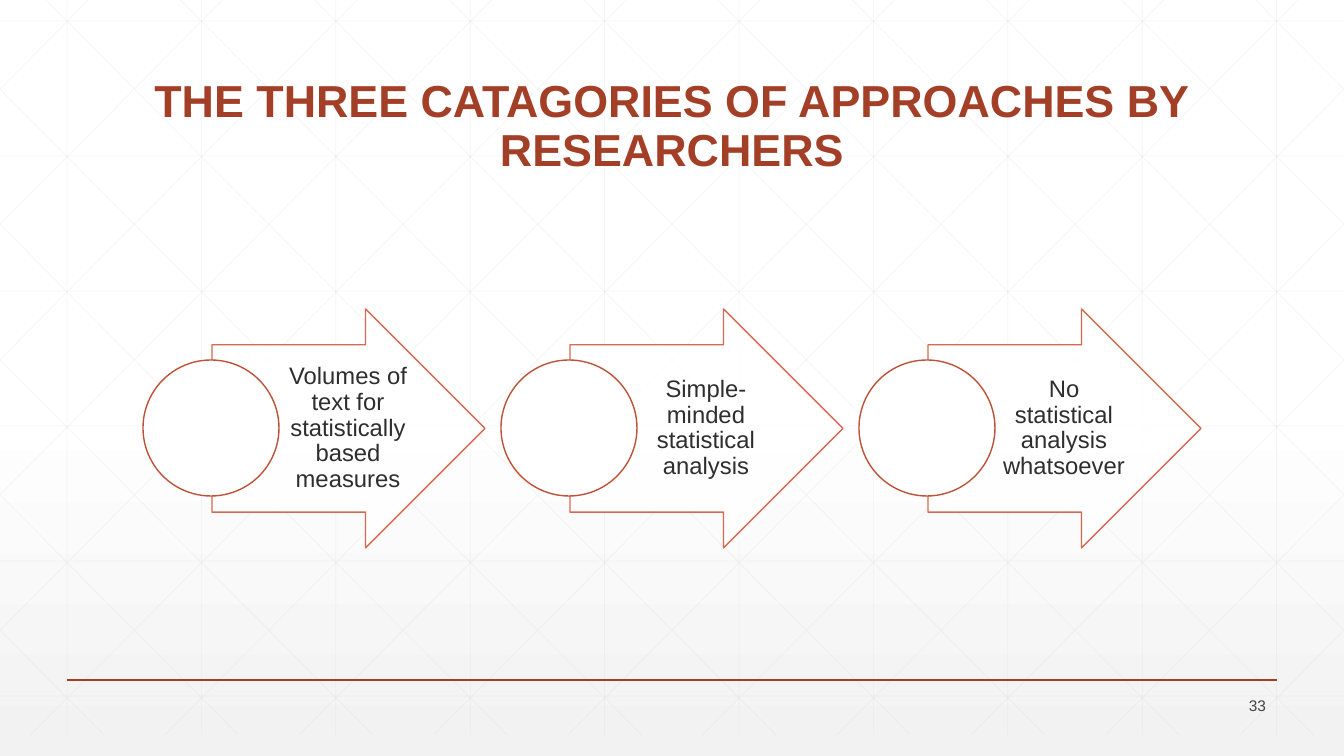
from lxml import etree
from pptx import Presentation
from pptx import util as u
from pptx.dml.color import RGBColor
from pptx.enum import shapes, text
from pptx.oxml.ns import qn

PX = 914400 / 100.8
W, H = 1344, 756
RUST, GRID, WHITE = "A43F27", "D9D9D9", "FFFFFF"


def paint(color, value, opacity=100):
    """Set a colour and, below 100 percent, its opacity."""
    color.rgb = RGBColor.from_string(value)
    if opacity < 100:
        # The colour element is the last one in its solid fill
        clr = color._xFill.find(qn("a:srgbClr"))
        etree.SubElement(clr, qn("a:alpha")).set("val", str(opacity * 1000))


def add_text(box, words, size, color, align, anchor, bold=False, insets=(10, 5, 10, 5), spacing=1.0):
    """Add a one-paragraph text box; box and insets are in px."""
    tf = s.shapes.add_textbox(*[round(v * PX) for v in box]).text_frame
    tf.word_wrap = True
    tf.vertical_anchor = anchor
    tf.margin_left, tf.margin_top, tf.margin_right, tf.margin_bottom = [round(v * PX) for v in insets]
    p = tf.paragraphs[0]
    p.text = words
    p.alignment = align
    p.line_spacing = spacing
    p.font.name, p.font.size, p.font.bold = "Arial", u.Pt(size), bold
    paint(p.font.color, color)


prs = Presentation()
prs.slide_width, prs.slide_height = round(W * PX), round(H * PX)
s = prs.slides.add_slide(prs.slide_layouts[6])

# Background: white, fading to light grey at the bottom
fill = s.background.fill
fill.gradient()
fill.gradient_angle = 270
for stop, position, value in zip(fill.gradient_stops, (0.53, 1), (WHITE, "F2F2F2")):
    stop.position = position
    paint(stop.color, value)

# Grid: verticals, horizontals and both families of diagonals
STEP, GRID_BOTTOM, RUN = W / 10, 735, 730
lines = [(67 + STEP * i, 0, 67 + STEP * i, GRID_BOTTOM, GRID, 0.5, 25) for i in range(10)]
lines += [(0, 21 + 135 * i, W, 21 + 135 * i, GRID, 0.5, 25) for i in range(6)]
for i in range(-5, 10):
    x = 46 + STEP * i
    left, right = max(x, 0), min(x + RUN, W)
    top, bottom = [(edge - x) * GRID_BOTTOM / RUN for edge in (left, right)]
    lines.append((left, top, right, bottom, GRID, 0.5, 25))
    lines.append((W - left, top, W - right, bottom, GRID, 0.5, 25))

# Footer rule goes on top of the grid
lines.append((67, 680, 1277, 680, RUST, 1, 100))
for x1, y1, x2, y2, value, width, opacity in lines:
    line = s.shapes.add_connector(shapes.MSO_CONNECTOR.STRAIGHT, *[round(v * PX) for v in (x1, y1, x2, y2)])
    line.line.width = u.Pt(width)
    paint(line.line.color, value, opacity)
    etree.SubElement(line._element.spPr, qn("a:effectLst"))

# Title
add_text((143, 55, 1058, 126), "THE THREE CATAGORIES OF APPROACHES BY RESEARCHERS", 32, RUST,
         text.PP_ALIGN.CENTER, text.MSO_ANCHOR.BOTTOM, bold=True, spacing=0.9)

# Three arrows, each with a circle at its tail
approaches = [
    "Volumes of text for statistically based measures",
    "Simple-minded statistical analysis",
    "No statistical analysis whatsoever",
]
parts = [
    (shapes.MSO_SHAPE.RIGHT_ARROW, (212, 309, 273, 239), "D15A3E", 90),
    (shapes.MSO_SHAPE.OVAL, (143, 360, 136, 136), "BE5238", 100),
]
for i, words in enumerate(approaches):
    dx = 358 * i
    for kind, (x, y, w, h), outline, opacity in parts:
        sp = s.shapes.add_shape(kind, *[round(v * PX) for v in (x + dx, y, w, h)])
        sp.shadow.inherit = False
        sp.fill.solid()
        paint(sp.fill.fore_color, WHITE, opacity)
        sp.line.width = u.Pt(1)
        paint(sp.line.color, outline, opacity)
        if kind == shapes.MSO_SHAPE.RIGHT_ARROW:
            sp.adjustments[0], sp.adjustments[1] = 0.7, 0.5
    add_text((280 + dx, 345, 133, 167), words, 17, "2D2E2D", text.PP_ALIGN.CENTER,
             text.MSO_ANCHOR.MIDDLE, insets=(5, 1, 2, 1), spacing=0.9)

# Slide number
add_text((1175, 693, 101, 24), "33", 11, "424342", text.PP_ALIGN.RIGHT, text.MSO_ANCHOR.MIDDLE)

prs.save("out.pptx")
